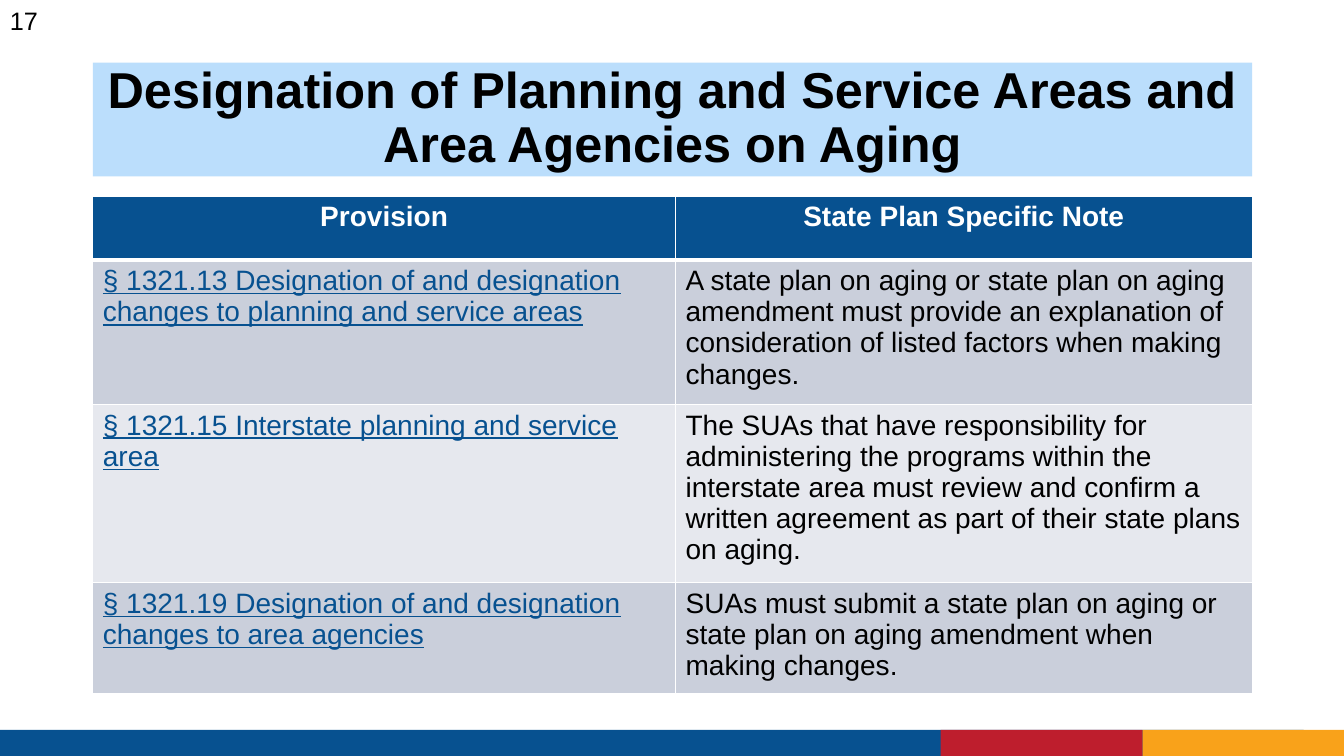
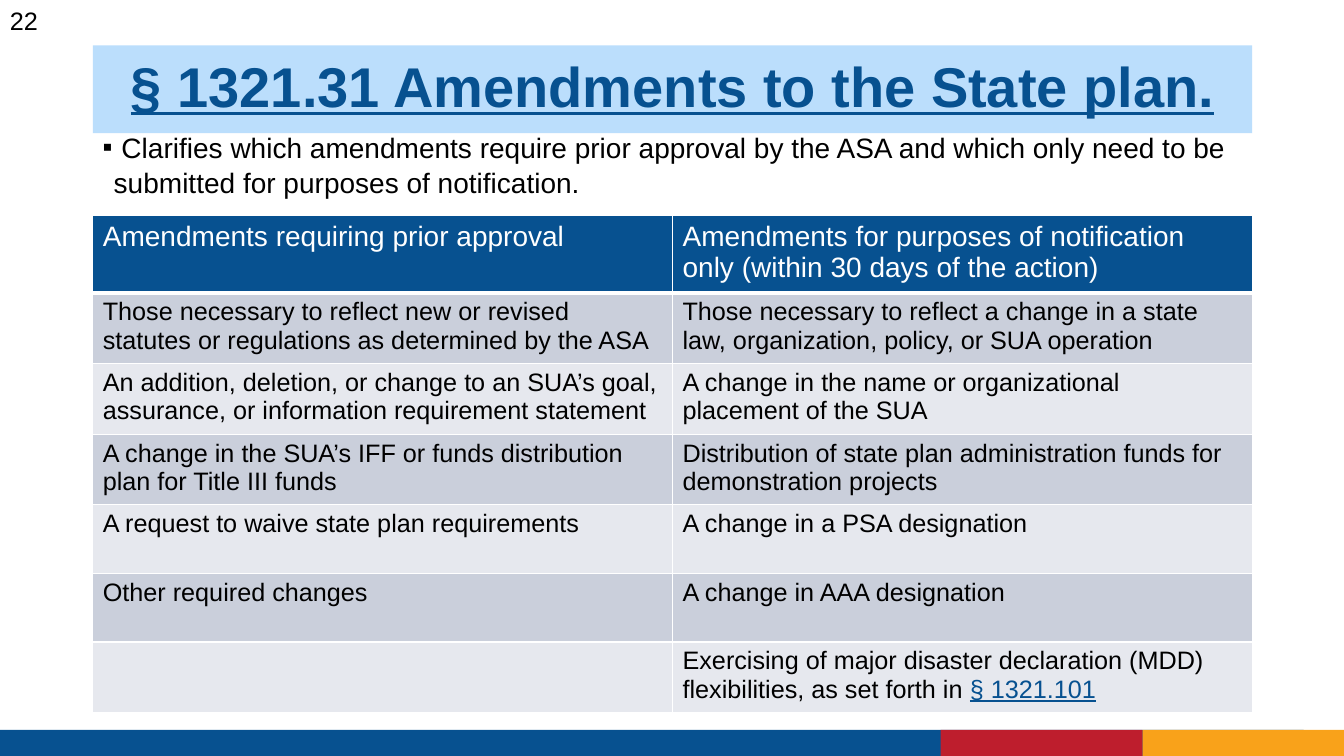
from lxml.etree import SubElement
from pptx import Presentation
from pptx.dml.color import RGBColor as RGB
from pptx.enum.shapes import MSO_SHAPE as SHAPE
from pptx.enum.text import MSO_ANCHOR as ANCHOR, MSO_AUTO_SIZE as AUTO, PP_ALIGN as ALIGN
from pptx.oxml.ns import qn
from pptx.util import Inches, Pt

FONT = "Arial"
COLORS = {
    "blue": "075190", "orange": "F9A21A", "red": "BE1E2D", "sky": "BBDEFC",
    "band": "CACFDB", "pale": "E6E8EE", "white": "FFFFFF", "black": "000000",
}
LEFT, WIDTH = 0.92, 11.5
FOOTER = [(0, 12.93, "blue"), (11.33, 2, "orange"), (9.33, 2, "red")]


def rgb(name):
    return RGB.from_string(COLORS[name])


def box(left, top, width, height):
    return [Inches(v) for v in (left, top, width, height)]


def add_text(p, text, size=18, color="black", bold=False, underline=False,
             align=None, spacing=None):
    if align is not None:
        p.alignment = align
    if spacing is not None:
        p.line_spacing = spacing
    r = p.add_run()
    r.text = text
    r.font.name, r.font.size = FONT, Pt(size)
    r.font.bold, r.font.underline = bold, underline
    r.font.color.rgb = rgb(color)


def link(text):
    return text, {"color": "blue", "underline": True}


def add_footer(s, top=7.24, height=0.27):
    for left, width, color in FOOTER:
        sp = s.shapes.add_shape(SHAPE.RECTANGLE, *box(left, top, width, height))
        sp.shadow.inherit = False
        sp.fill.solid()
        sp.fill.fore_color.rgb = rgb(color)
        sp.line.fill.background()


def add_title(s, text, top, height, **fmt):
    sp = s.shapes.title
    sp.left, sp.top, sp.width, sp.height = box(LEFT, top, WIDTH, height)
    sp.fill.solid()
    sp.fill.fore_color.rgb = rgb("sky")
    tf = sp.text_frame
    tf.auto_size, tf.word_wrap = AUTO.NONE, True
    tf.vertical_anchor = ANCHOR.MIDDLE
    add_text(tf.paragraphs[0], text, bold=True, align=ALIGN.CENTER, spacing=0.9, **fmt)


def add_textbox(s, left, top, width, height):
    tf = s.shapes.add_textbox(*box(left, top, width, height)).text_frame
    tf.word_wrap = True
    return tf.paragraphs[0]


def add_bullet(s, text, top, height):
    p = add_textbox(s, LEFT, top, WIDTH, height)
    pPr = p._p.get_or_add_pPr()
    pPr.set("marL", str(Inches(0.11)))
    pPr.set("indent", str(Inches(-0.11)))
    SubElement(pPr, qn("a:buFont"), typeface=FONT)
    SubElement(pPr, qn("a:buChar"), char="▪")
    add_text(p, text, size=20, spacing=1.05)


def style_cell(cell, fill, bottom):
    tcPr = cell._tc.get_or_add_tcPr()
    for side, weight in (("L", 1), ("R", 1), ("T", 1), ("B", bottom)):
        ln = SubElement(tcPr, qn(f"a:ln{side}"), w=str(Pt(weight)))
        SubElement(SubElement(ln, qn("a:solidFill")), qn("a:srgbClr"), val=COLORS["white"])
    cell.fill.solid()
    cell.fill.fore_color.rgb = rgb(fill)


def add_table(s, top, widths, heights, rows, header, size):
    frame = s.shapes.add_table(len(rows), len(widths),
                               *box(LEFT, top, sum(widths), sum(heights)))
    table = frame.table
    for column, width in zip(table.columns, widths):
        column.width = Inches(width)
    for i, (row, height) in enumerate(zip(rows, heights)):
        table.rows[i].height = Inches(height)
        fill = "blue" if i == 0 else ("pale", "band")[i % 2]
        base = {"size": 20, "color": "white", **header} if i == 0 else {"size": size}
        for j, runs in enumerate(row):
            cell = table.cell(i, j)
            style_cell(cell, fill, 3 if i == 0 else 1)
            for run in runs:
                text, fmt = (run, {}) if isinstance(run, str) else run
                add_text(cell.text_frame.paragraphs[0], text, **{**base, **fmt})


def new_slide(prs, number):
    s = prs.slides.add_slide(prs.slide_layouts[5])
    add_footer(s)
    add_text(add_textbox(s, 0, 0, 0.53, 0.4), number)
    return s


def designation_slide(prs):
    s = new_slide(prs, "17")
    add_title(s, "Designation of Planning and Service Areas and Area Agencies on Aging",
              0.62, 1.13, size=36)
    rows = [
        (["Provision"], ["State Plan Specific Note"]),
        ([link("§ 1321.13 Designation of and designation changes to planning and service areas")],
         ["A state plan on aging or state plan on aging amendment must provide an explanation "
          "of consideration of listed factors when making changes."]),
        ([link("§ 1321.15 Interstate planning and service area")],
         ["The SUAs that have responsibility for administering the programs within the "
          "interstate area must review and confirm a written agreement as part of their "
          "state plans on aging."]),
        ([link("§ 1321.19 Designation of and designation changes to area agencies")],
         ["SUAs must submit a state plan on aging or state plan on aging amendment when "
          "making changes."]),
    ]
    add_table(s, 1.95, [5.78, 5.72], [0.63, 1.34, 1.65, 1.02], rows,
              {"bold": True, "align": ALIGN.CENTER}, 20)


def amendments_slide(prs):
    s = new_slide(prs, "22")
    add_title(s, "§ 1321.31 Amendments to the State plan.", 0.45, 0.87,
              size=40, color="blue", underline=True)
    add_bullet(s, " Clarifies which amendments require prior approval by the ASA and which "
               "only need to be submitted for purposes of notification.", 1.23, 0.87)
    rows = [
        (["Amendments requiring prior approval"],
         ["Amendments for purposes of notification only (within 30 days of the action)"]),
        (["Those necessary to reflect new or revised statutes or regulations as determined "
          "by the ASA"],
         ["Those necessary to reflect a change in a state law, organization, policy, or SUA "
          "operation"]),
        (["An addition, deletion, or change to an SUA’s goal, assurance, or information "
          "requirement statement"],
         ["A change in the name or organizational placement of the SUA"]),
        (["A change in the SUA’s IFF or funds distribution plan for Title III funds"],
         ["Distribution of state plan administration funds for demonstration projects"]),
        (["A request to waive state plan requirements"], ["A change in a PSA designation"]),
        (["Other required changes"], ["A change in AAA designation"]),
        ([], ["Exercising of major disaster declaration (MDD) flexibilities, as set forth in ",
              link("§ 1321.101")]),
    ]
    add_table(s, 2.14, [WIDTH / 2] * 2, [0.68] * len(rows), rows, {}, 18)


def main():
    prs = Presentation()
    prs.slide_width, prs.slide_height = Inches(13.33), Inches(7.5)
    designation_slide(prs)
    amendments_slide(prs)
    prs.save("out.pptx")


if __name__ == "__main__":
    main()
